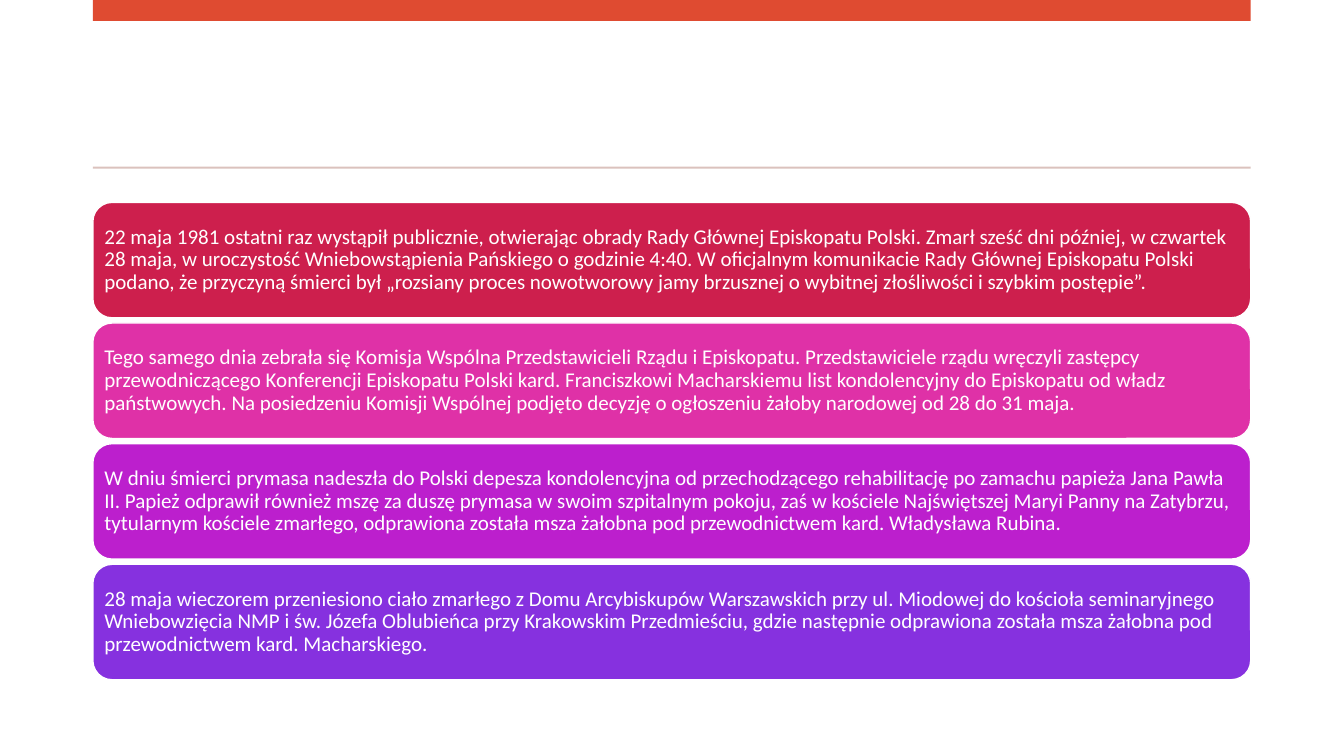
from pptx import Presentation
from pptx.dml.color import RGBColor
from pptx.enum.shapes import MSO_SHAPE
from pptx.enum.text import MSO_ANCHOR, PP_ALIGN
from pptx.util import Cm, Pt

HUES = {
    "bar": "DF4B31",
    "rule": "DBC2BD",
    "white": "FFFFFF",
    "red": "CD1F4D",
    "pink": "DF31A7",
    "plum": "BC1FCD",
    "violet": "8631DF",
}

NOTES = [
    ("red", "22 maja 1981 ostatni raz wystąpił publicznie, otwierając obrady Rady Głównej "
            "Episkopatu Polski. Zmarł sześć dni później, w czwartek 28 maja, w uroczystość "
            "Wniebowstąpienia Pańskiego o godzinie 4:40. W oficjalnym komunikacie Rady Głównej "
            "Episkopatu Polski podano, że przyczyną śmierci był „rozsiany proces nowotworowy "
            "jamy brzusznej o wybitnej złośliwości i szybkim postępie”."),
    ("pink", "Tego samego dnia zebrała się Komisja Wspólna Przedstawicieli Rządu i Episkopatu. "
             "Przedstawiciele rządu wręczyli zastępcy przewodniczącego Konferencji Episkopatu "
             "Polski kard. Franciszkowi Macharskiemu list kondolencyjny do Episkopatu od władz "
             "państwowych. Na posiedzeniu Komisji Wspólnej podjęto decyzję o ogłoszeniu żałoby "
             "narodowej od 28 do 31 maja."),
    ("plum", "W dniu śmierci prymasa nadeszła do Polski depesza kondolencyjna od przechodzącego "
             "rehabilitację po zamachu papieża Jana Pawła II. Papież odprawił również mszę za "
             "duszę prymasa w swoim szpitalnym pokoju, zaś w kościele Najświętszej Maryi Panny "
             "na Zatybrzu, tytularnym kościele zmarłego, odprawiona została msza żałobna pod "
             "przewodnictwem kard. Władysława Rubina."),
    ("violet", "28 maja wieczorem przeniesiono ciało zmarłego z Domu Arcybiskupów Warszawskich "
               "przy ul. Miodowej do kościoła seminaryjnego Wniebowzięcia NMP i św. Józefa "
               "Oblubieńca przy Krakowskim Przedmieściu, gdzie następnie odprawiona została "
               "msza żałobna pod przewodnictwem kard. Macharskiego."),
]

LEFT, WIDTH = 2.34, 29.18
TOP, HIGH, STEP = 5.1, 2.91, 3.04


def tint(name):
    return RGBColor.from_string(HUES[name])


def apply(item, style):
    for key, value in style.items():
        setattr(item, key, value)


class Page:
    inset = Cm(0.15)
    frame = {
        "word_wrap": True,
        "vertical_anchor": MSO_ANCHOR.MIDDLE,
        "margin_left": inset,
        "margin_right": inset,
        "margin_top": inset,
        "margin_bottom": inset,
    }
    para = {"alignment": PP_ALIGN.LEFT, "line_spacing": 0.9}
    font = {"name": "Calibri", "size": Pt(15)}

    def __init__(self, slide):
        self.slide = slide

    def block(self, kind, top, high, hue):
        shape = self.slide.shapes.add_shape(
            kind, Cm(LEFT), Cm(top), Cm(WIDTH), Cm(high))
        shape.shadow.inherit = False
        shape.fill.solid()
        shape.fill.fore_color.rgb = tint(hue)
        return shape

    def band(self, top, high, hue):
        shape = self.block(MSO_SHAPE.RECTANGLE, top, high, hue)
        shape.line.fill.background()

    def card(self, top, hue, text):
        shape = self.block(MSO_SHAPE.ROUNDED_RECTANGLE, top, HIGH, hue)
        shape.line.color.rgb = tint("white")
        shape.line.width = Pt(1)
        apply(shape.text_frame, self.frame)
        para = shape.text_frame.paragraphs[0]
        apply(para, self.para)
        run = para.add_run()
        run.text = text
        apply(run.font, self.font)
        run.font.color.rgb = tint("white")


def main():
    deck = Presentation()
    apply(deck, {"slide_width": Cm(33.87), "slide_height": Cm(19.05)})
    page = Page(deck.slides.add_slide(deck.slide_layouts[6]))
    page.band(0, 0.53, "bar")
    page.band(4.2, 0.05, "rule")
    for row, (hue, text) in enumerate(NOTES):
        page.card(TOP + row * STEP, hue, text)
    deck.save("out.pptx")


if __name__ == "__main__":
    main()
